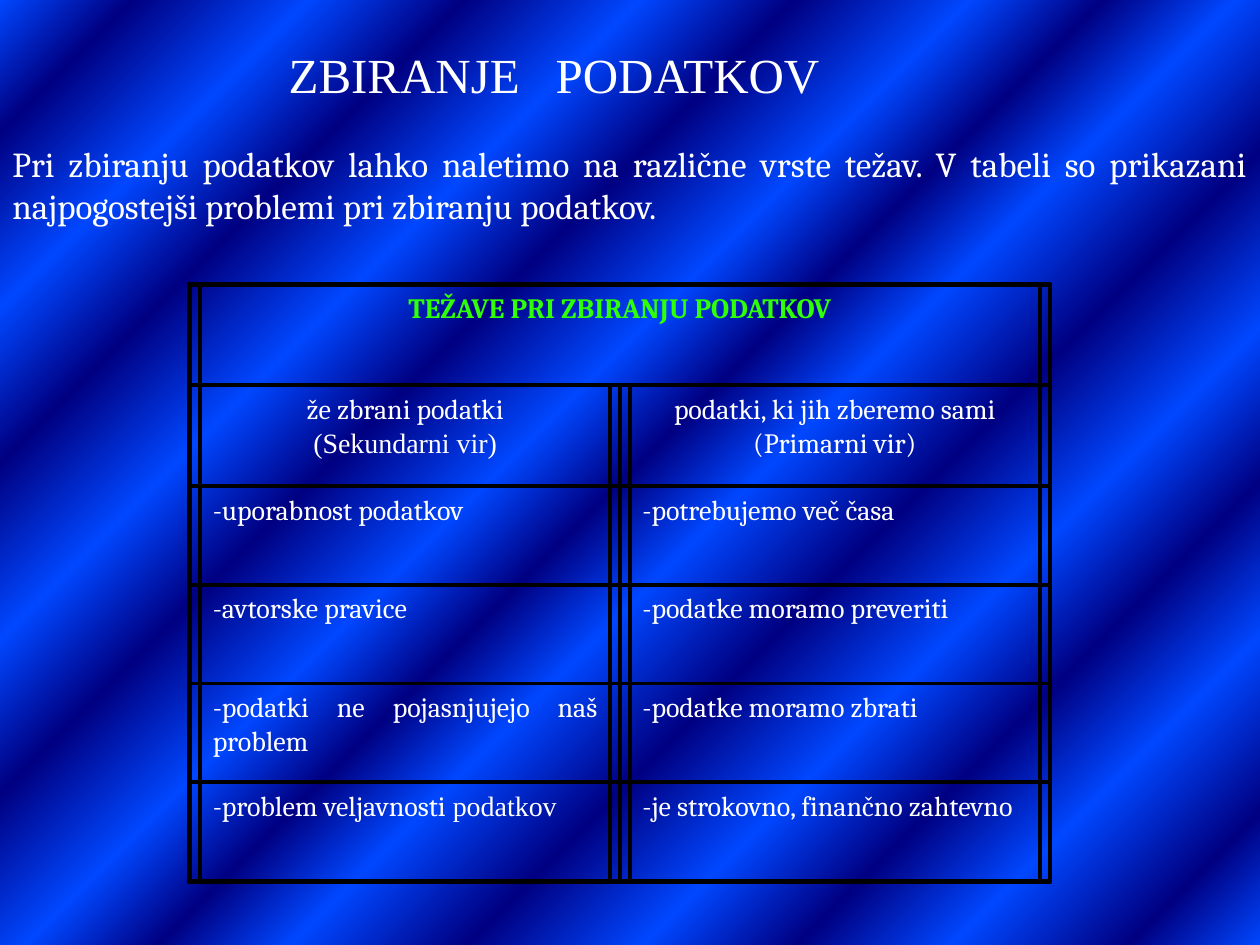
from dataclasses import dataclass

from lxml import etree
from pptx import Presentation
from pptx.dml.color import RGBColor
from pptx.enum.shapes import MSO_SHAPE
from pptx.enum.text import MSO_ANCHOR, MSO_AUTO_SIZE, PP_ALIGN
from pptx.oxml.ns import qn
from pptx.util import Cm, Pt

RECT = MSO_SHAPE.RECTANGLE
TOP = MSO_ANCHOR.TOP
LEFT, MID, FULL = PP_ALIGN.LEFT, PP_ALIGN.CENTER, PP_ALIGN.JUSTIFY
GROW, FIXED = MSO_AUTO_SIZE.SHAPE_TO_FIT_TEXT, MSO_AUTO_SIZE.NONE


@dataclass
class Theme:
    serif: str = "Cambria"
    roman: str = "Times New Roman"
    text: str = "FFFFFF"
    head: str = "30FF07"
    line: str = "000000"
    light: str = "0047FF"
    dark: str = "000082"
    title: int = 28
    intro: int = 20
    cell: int = 16
    rule: float = 2.25


theme = Theme()


def write(frame, *paras, size=theme.cell, color=theme.text, bold=False,
          align=FULL, fit=FIXED):
    """Each paragraph is a list of (text, font) runs."""
    frame.word_wrap = True
    frame.auto_size = fit
    frame.vertical_anchor = TOP
    for i, runs in enumerate(paras):
        para = frame.add_paragraph() if i else frame.paragraphs[0]
        para.alignment = align
        for text, font in runs:
            run = para.add_run()
            run.text = text
            run.font.name = font
            run.font.size = Pt(size)
            run.font.bold = bold
            run.font.color.rgb = RGBColor.from_string(color)


def box(shapes, x, y, w, h):
    rect = shapes.add_shape(RECT, Cm(x), Cm(y), Cm(w), Cm(h))
    rect.shadow.inherit = False
    rect.fill.background()
    rect.line.color.rgb = RGBColor.from_string(theme.line)
    rect.line.width = Pt(theme.rule)
    return rect


deck = Presentation()
deck.slide_width, deck.slide_height = Cm(25.4), Cm(19.05)
slide = deck.slides.add_slide(deck.slide_layouts[5])

# Striped background: light and dark stops take turns
fill = slide.background.fill
fill.gradient()
fill.gradient_angle = 315
stops = slide.background._cSld.find(".//" + qn("a:gsLst"))
for old in list(stops):
    stops.remove(old)
for i, pos in enumerate([0, 6, 14, 21, 29, 36, 44, 50, 56, 64, 72, 79, 86, 94, 100]):
    stop = etree.SubElement(stops, qn("a:gs"), pos=str(pos * 1000))
    etree.SubElement(stop, qn("a:srgbClr"), val=theme.dark if i % 2 else theme.light)

# Title: the inset places the first word, a tab stop the second
title = slide.shapes.title
title.left, title.top, title.width, title.height = Cm(0.64), Cm(0.64), Cm(23.93), Cm(1.45)
frame = title.text_frame
frame.margin_left, frame.margin_top = Cm(5.18), Cm(0.25)
write(frame, [("ZBIRANJE\tPODATKOV", theme.roman)], size=theme.title, align=LEFT)
tabs = etree.SubElement(frame.paragraphs[0]._p.get_or_add_pPr(), qn("a:tabLst"))
etree.SubElement(tabs, qn("a:tab"), pos=str(Cm(5.38)), algn="l")

# Introduction
intro = slide.shapes.add_textbox(Cm(0), Cm(2.74), Cm(25.4), Cm(1.96))
write(intro.text_frame,
      [("Pri zbiranju podatkov lahko naletimo na različne vrste težav. V tabeli so "
        "prikazani najpogostejši problemi pri zbiranju podatkov.", theme.serif)],
      size=theme.intro, fit=GROW)

# Grid of double-ruled cells: each row lists its cells, each cell its paragraphs
serif, roman = theme.serif, theme.roman
rows = [
    [[[("TEŽAVE PRI ZBIRANJU PODATKOV", serif)]]],
    [[[("že zbrani podatki", serif)], [("(Sekundarni vir)", roman)]],
     [[("podatki, ki jih zberemo sami", serif)], [("(Primarni vir)", serif)]]],
    [[[("-uporabnost podatkov", serif)]], [[("-potrebujemo več časa", serif)]]],
    [[[("-avtorske pravice", serif)]], [[("-podatke moramo preveriti", serif)]]],
    [[[("-podatki ne pojasnjujejo naš problem", serif)]],
     [[("-podatke moramo zbrati", serif)]]],
    [[[("-problem veljavnosti", serif), (" podatkov", roman)]],
     [[("-je strokovno, finančno zahtevno", serif)]]],
]
grid = slide.shapes.add_group_shape().shapes
left, y, width, gap = 3.84, 5.74, 17.32, 0.2
for i, row in enumerate(rows):
    high = 2.03 if i < 2 else 1.99
    wide = width / len(row)
    for j, paras in enumerate(row):
        x = left + j * wide
        cell = box(grid, x + gap, y, wide - 2 * gap, high)
        write(cell.text_frame, *paras, bold=i == 0,
              color=theme.text if i else theme.head, align=MID if i < 2 else FULL)
        box(grid, x, y, wide, high)
    y += high

# Outer frame
box(grid, 3.81, 5.72, 17.35, 12.07)

deck.save("out.pptx")
